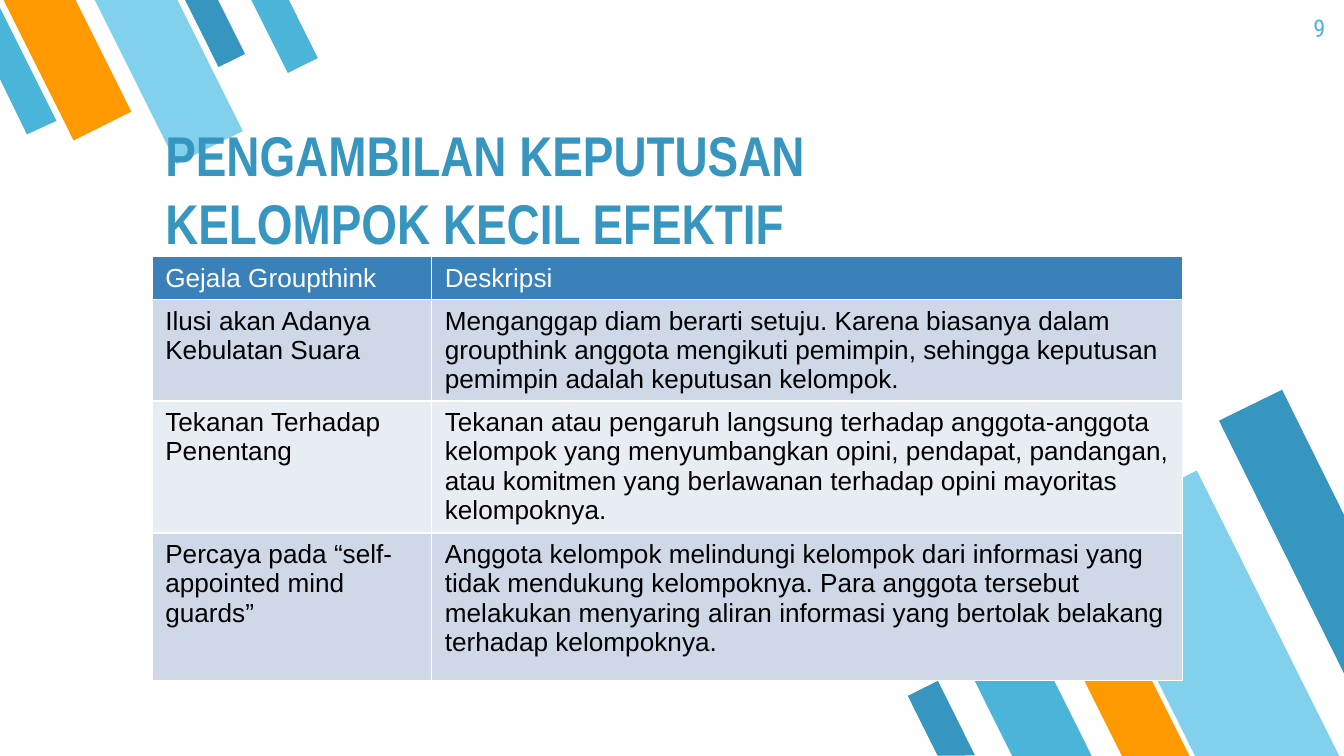
from typing import NamedTuple

import pptx
import pptx.dml.color
import pptx.enum.shapes
import pptx.enum.text
import pptx.oxml
import pptx.oxml.ns
import pptx.util

COLORS = {
    "teal": "4BB5D9", "sky": "81D1EC", "orange": "FF9900", "blue": "3796BF",
    "head": "3A81BA", "odd": "CED8E7", "even": "E8EDF3",
    "white": "FFFFFF", "black": "000000",
}
WIDTH = pptx.util.Inches(10)
HEIGHT = WIDTH * 9 // 16
UNIT = WIDTH / 100


class Box(NamedTuple):
    left: float
    top: float
    width: float
    height: float


class Bar(NamedTuple):
    box: Box
    color: str


class Patch(NamedTuple):
    points: tuple
    color: str


class Font(NamedTuple):
    name: str
    size: float
    color: str
    bold: bool = False


LOW_BARS = (
    Bar(Box(73.3, 45, 5.3, 13.2), "teal"),
    Bar(Box(85.3, 35.9, 9.6, 23.9), "sky"),
    Bar(Box(81.8, 46.8, 4.5, 11.1), "orange"),
    Bar(Box(68.8, 50.9, 2.5, 6.2), "blue"),
)
LOW_PATCH = Patch(((95.4, 29), (90.7, 31.3), (100, 50.1), (100, 38.3)), "blue")
TOP_BARS = (
    Bar(Box(14.9, -0.8, 2.2, 5.6), "blue"),
    Bar(Box(2.6, -1.8, 4.8, 11.8), "orange"),
    Bar(Box(9.8, -2, 5.5, 13.7), "sky"),
    Bar(Box(19.9, -1, 2.5, 6.2), "teal"),
)
TOP_PATCH = Patch(((2, 10), (4.2, 9), (0, 0.6), (0, 5.9)), "teal")

TITLE = "PENGAMBILAN KEPUTUSAN KELOMPOK KECIL EFEKTIF"
ROWS = (
    ("Gejala Groupthink", "Deskripsi"),
    ("Ilusi akan Adanya Kebulatan Suara",
     "Menganggap diam berarti setuju. Karena biasanya dalam groupthink anggota "
     "mengikuti pemimpin, sehingga keputusan pemimpin adalah keputusan kelompok."),
    ("Tekanan Terhadap Penentang",
     "Tekanan atau pengaruh langsung terhadap anggota-anggota kelompok yang "
     "menyumbangkan opini, pendapat, pandangan, atau komitmen yang berlawanan "
     "terhadap opini mayoritas kelompoknya."),
    ("Percaya pada “self-appointed mind guards”",
     "Anggota kelompok melindungi kelompok dari informasi yang tidak mendukung "
     "kelompoknya. Para anggota tersebut melakukan menyaring aliran informasi "
     "yang bertolak belakang terhadap kelompoknya."),
)
COLS = (20.8, 55.9)
TALL = (3.1, 7.5, 9.8, 11)


def grid(count: float) -> int:
    return round(count * UNIT)


def place(box: tuple) -> tuple:
    return tuple(grid(side) for side in box)


def tint(name: str) -> pptx.dml.color.RGBColor:
    return pptx.dml.color.RGBColor.from_string(COLORS[name])


def paint(shape, color: str) -> None:
    shape.shadow.inherit = False
    shape.fill.solid()
    shape.fill.fore_color.rgb = tint(color)
    shape.line.fill.background()


def draw_bar(slide, bar: Bar, turn: float) -> None:
    kind = pptx.enum.shapes.MSO_SHAPE.FLOWCHART_MANUAL_INPUT
    shape = slide.shapes.add_shape(kind, *place(bar.box))
    shape.rotation = turn
    shape._element.spPr.xfrm.set("flipH", "1")
    paint(shape, bar.color)


def draw_patch(slide, patch: Patch) -> None:
    first, *rest = [place(point) for point in patch.points]
    form = slide.shapes.build_freeform(*first)
    form.add_line_segments(rest, close=True)
    paint(form.convert_to_shape(), patch.color)


def write(frame, text: str, font: Font) -> None:
    run = frame.paragraphs[0].add_run()
    run.text = text
    run.font.name = font.name
    run.font.size = pptx.util.Pt(font.size)
    run.font.bold = font.bold
    run.font.color.rgb = tint(font.color)


def pad(frame) -> None:
    frame.word_wrap = True
    frame.auto_size = pptx.enum.text.MSO_AUTO_SIZE.NONE
    frame.margin_left = frame.margin_right = grid(1)
    frame.margin_top = frame.margin_bottom = grid(1)


def draw_title(slide) -> None:
    title = slide.shapes.title
    slide.shapes._spTree.append(title._element)
    title.left, title.top, title.width, title.height = place(Box(11.3, 12.6, 63, 7.4))
    frame = title.text_frame
    pad(frame)
    frame.vertical_anchor = pptx.enum.text.MSO_ANCHOR.BOTTOM
    frame.paragraphs[0].alignment = pptx.enum.text.PP_ALIGN.LEFT
    write(frame, TITLE, Font("Arial Narrow", 30, "blue", True))


def draw_page(slide) -> None:
    frame = slide.shapes.add_textbox(*place(Box(93.6, 0, 6, 4.3))).text_frame
    pad(frame)
    frame.paragraphs[0].alignment = pptx.enum.text.PP_ALIGN.RIGHT
    write(frame, "9", Font("Roboto Condensed", 13, "teal"))


def edge(cell) -> None:
    props = cell._tc.get_or_add_tcPr()
    for spot, side in enumerate(("lnL", "lnR", "lnT", "lnB")):
        line = pptx.oxml.parse_xml(
            f'<a:{side} {pptx.oxml.ns.nsdecls("a")} w="{pptx.util.Pt(1)}">'
            f'<a:solidFill><a:srgbClr val="{COLORS["white"]}"/></a:solidFill>'
            f'</a:{side}>'
        )
        props.insert(spot, line)


def draw_table(slide) -> None:
    box = Box(11.3, 19.1, sum(COLS), sum(TALL))
    table = slide.shapes.add_table(len(ROWS), len(COLS), *place(box)).table
    for col, width in zip(table.columns, COLS):
        col.width = grid(width)
    for row, height in zip(table.rows, TALL):
        row.height = grid(height)
    for down, texts in enumerate(ROWS):
        top = down == 0
        fill = "head" if top else ("even", "odd")[down % 2]
        font = Font("Arial", 14, "white" if top else "black")
        for across, text in enumerate(texts):
            cell = table.cell(down, across)
            cell.fill.solid()
            cell.fill.fore_color.rgb = tint(fill)
            edge(cell)
            write(cell.text_frame, text, font)


def main() -> None:
    deck = pptx.Presentation()
    deck.slide_width, deck.slide_height = WIDTH, HEIGHT
    slide = deck.slides.add_slide(deck.slide_layouts.get_by_name("Title Only"))
    slide.background.fill.solid()
    slide.background.fill.fore_color.rgb = tint("white")
    for bar in LOW_BARS:
        draw_bar(slide, bar, 153.5)
    draw_patch(slide, LOW_PATCH)
    for bar in TOP_BARS:
        draw_bar(slide, bar, 333.5)
    draw_patch(slide, TOP_PATCH)
    draw_title(slide)
    draw_page(slide)
    draw_table(slide)
    deck.save("out.pptx")


if __name__ == "__main__":
    main()
